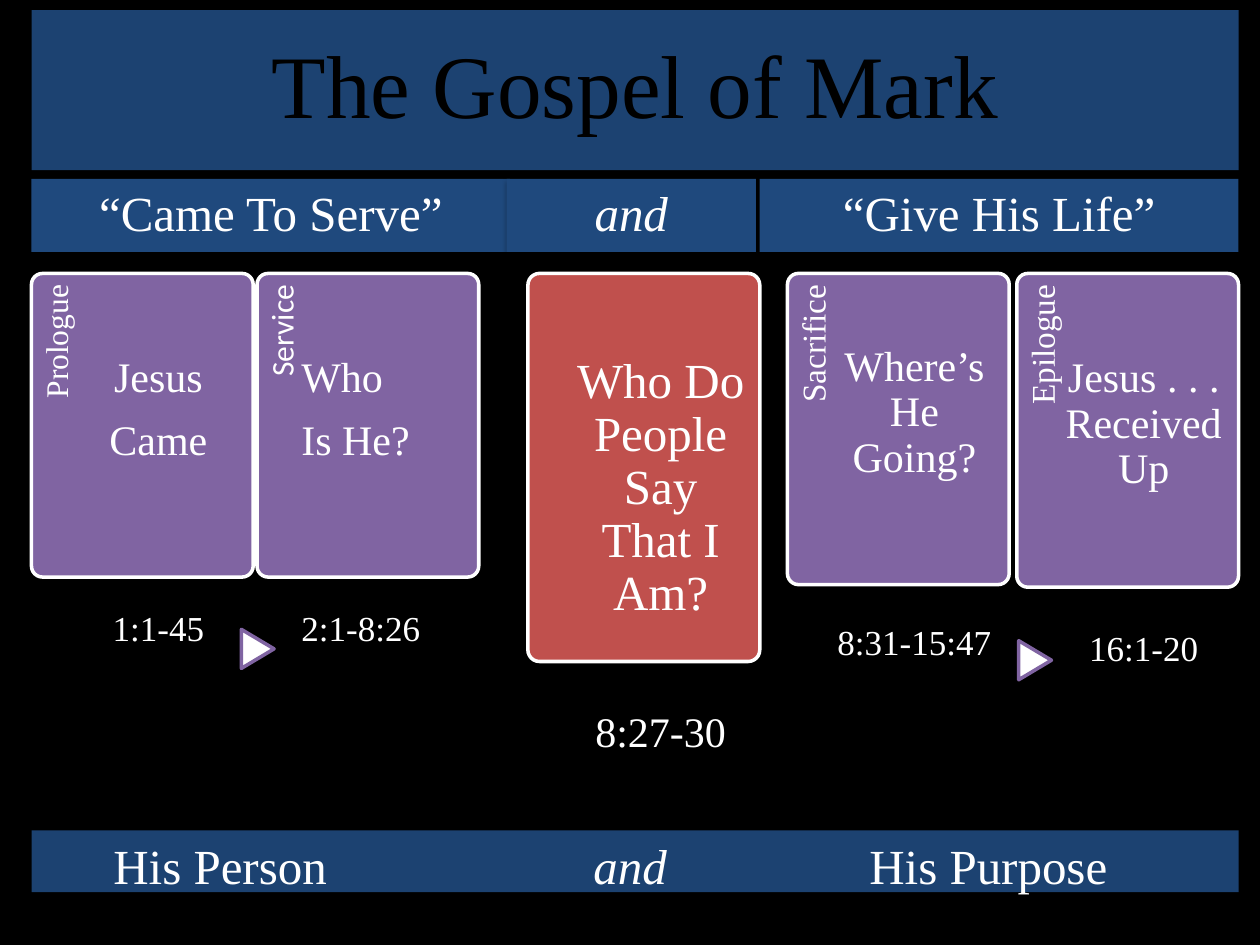
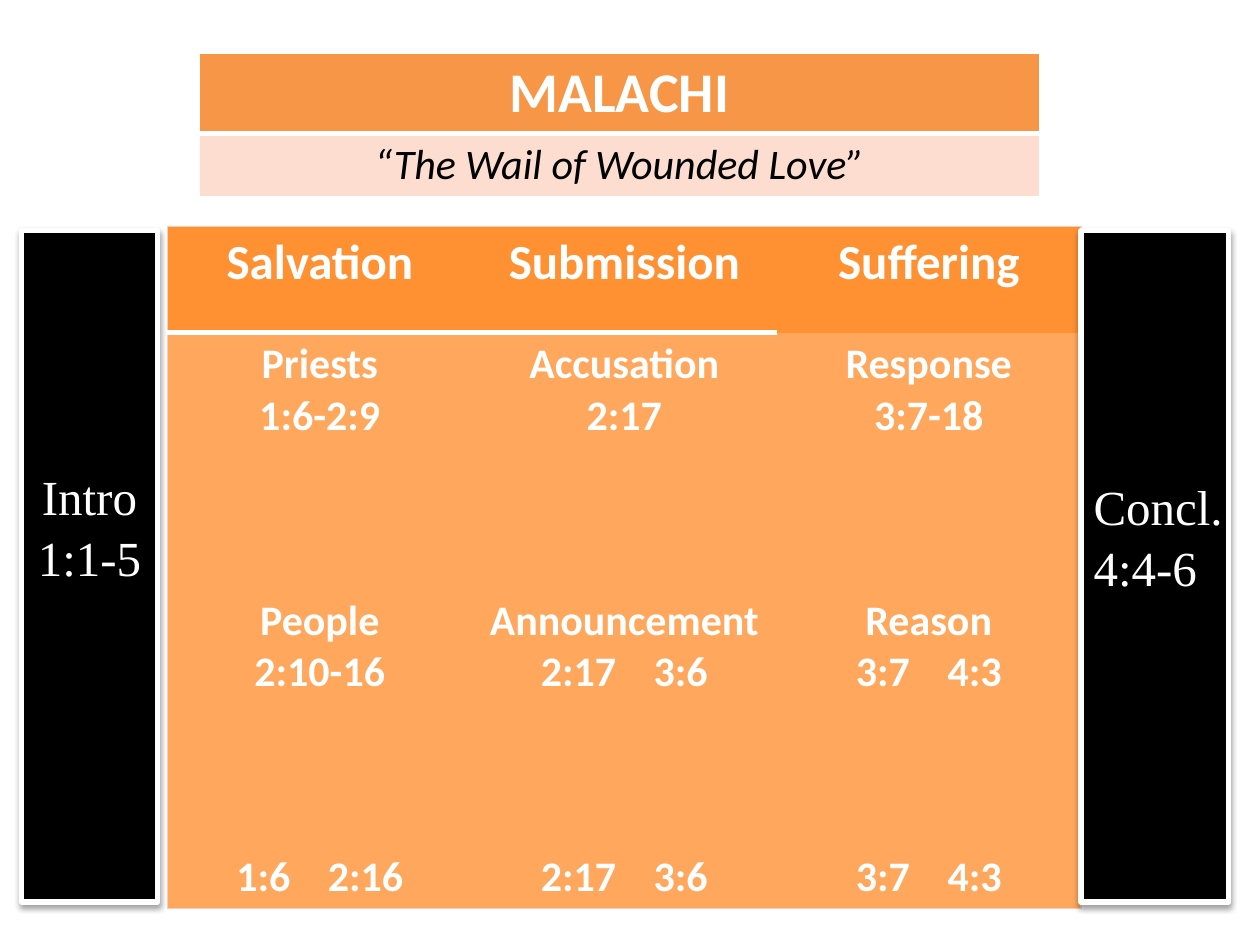
from lxml import etree
from pptx import Presentation
from pptx.dml.color import RGBColor
from pptx.enum.shapes import MSO_SHAPE
from pptx.enum.text import MSO_ANCHOR, PP_ALIGN
from pptx.oxml.ns import qn
from pptx.util import Inches, Pt

RECTANGLE = MSO_SHAPE.RECTANGLE
ROUNDED = MSO_SHAPE.ROUNDED_RECTANGLE
TRIANGLE = MSO_SHAPE.FLOWCHART_EXTRACT
LEFT, CENTER, RIGHT = PP_ALIGN.LEFT, PP_ALIGN.CENTER, PP_ALIGN.RIGHT
MIDDLE = MSO_ANCHOR.MIDDLE

BLACK = RGBColor(0x00, 0x00, 0x00)
WHITE = RGBColor(0xFF, 0xFF, 0xFF)
DEEP_BLUE = RGBColor(0x1C, 0x42, 0x71)
BLUE = RGBColor(0x1F, 0x49, 0x7D)
PURPLE = RGBColor(0x80, 0x64, 0xA2)
RED = RGBColor(0xC0, 0x50, 0x4D)
ORANGE = RGBColor(0xF7, 0x96, 0x46)
BRIGHT_ORANGE = RGBColor(0xFF, 0x91, 0x33)
LIGHT_ORANGE = RGBColor(0xFF, 0xA7, 0x5C)
PEACH = RGBColor(0xFC, 0xDD, 0xCF)
EDGE = RGBColor(0xF7, 0xCE, 0xBB)

SERIF, SANS = "Times New Roman", "Calibri"


def add_box(slide, at, fill=None, line=None, width=2, kind=RECTANGLE, shadow=False):
    """Add a shape, or a plain text box when there is no fill."""
    place = [Inches(value) for value in at]
    if fill is None:
        shape = slide.shapes.add_textbox(*place)
    else:
        shape = slide.shapes.add_shape(kind, *place)
        shape.shadow.inherit = False
        shape.fill.solid()
        shape.fill.fore_color.rgb = fill
        if line is None:
            shape.line.fill.background()
        else:
            shape.line.color.rgb = line
            shape.line.width = Pt(width)
    if shadow:
        effects = shape._element.spPr.find(qn("a:effectLst"))
        outer = etree.SubElement(effects, qn("a:outerShdw"), blurRad=str(Pt(3.1)),
                                 dist=str(Pt(1.7)), dir="5400000", rotWithShape="0")
        black = etree.SubElement(outer, qn("a:srgbClr"), val=str(BLACK))
        etree.SubElement(black, qn("a:alpha"), val="36000")
    frame = shape.text_frame
    frame.word_wrap = True
    frame.margin_left = frame.margin_right = frame.margin_top = frame.margin_bottom = 0
    return shape


def add_text(frame, lines, align=CENTER, font=SERIF, color=WHITE, spacing=None,
             bold=False, italic=False, gap=None):
    """Write (text, size, space before) lines; gap widens the spaces, in points."""
    for index, (text, size, before) in enumerate(lines):
        paragraph = frame.paragraphs[0] if index == 0 else frame.add_paragraph()
        paragraph.alignment = align
        paragraph.space_before = Pt(before)
        if spacing:
            paragraph.line_spacing = spacing
        for piece in text.partition(" ") if gap else [text]:
            if not piece:
                continue
            run = paragraph.add_run()
            run.text = piece
            run.font.name, run.font.size = font, Pt(size)
            run.font.bold, run.font.italic = bold, italic
            run.font.color.rgb = color
            if gap and piece == " ":
                run._r.get_or_add_rPr().set("spc", str(gap * 100))


presentation = Presentation()
presentation.slide_width, presentation.slide_height = Inches(10), Inches(7.5)
slides = []
for background in (BLACK, WHITE):
    slide = presentation.slides.add_slide(presentation.slide_layouts[6])
    slide.background.fill.solid()
    slide.background.fill.fore_color.rgb = background
    slides.append(slide)
mark, malachi = slides

# Mark: title, theme banners and bottom band
BAND_LEFT, BAND_WIDTH = 0.25, 9.58
banners = [
    ("The Gospel of Mark", (BAND_LEFT, 0.08, BAND_WIDTH, 1.27), DEEP_BLUE, 51, BLACK),
    ("“Came To Serve”", (BAND_LEFT, 1.42, 3.8, 0.58), BLUE, 28, WHITE),
    ("and", (4.02, 1.42, 1.98, 0.58), BLUE, 28, WHITE),
    ("“Give His Life”", (6.03, 1.42, 3.8, 0.58), BLUE, 28, WHITE),
]
for text, at, fill, size, color in banners:
    banner = add_box(mark, at, fill, shadow=fill == BLUE)
    banner.text_frame.vertical_anchor = MIDDLE
    add_text(banner.text_frame, [(text, size, 0)], color=color, spacing=0.9,
             italic=text == "and")

add_box(mark, (BAND_LEFT, 6.59, BAND_WIDTH, 0.49), DEEP_BLUE)
for text, left in (("His Person", 0.9), ("and", 4.71), ("His Purpose", 6.9)):
    phrase = add_box(mark, (left, 6.63, 2.5, 0.47))
    add_text(phrase.text_frame, [(text, 28, 0)], LEFT, italic=text == "and")

# Mark: cards, each with a side label, a question and its verses below
CARD_TOP = 2.17
cards = [
    # left, width, height, fill, label, label size, label font, text inset, align, lines
    (0.25, 1.76, 2.41, PURPLE, "Prologue", 18, SERIF, 0.66, CENTER,
     [("Jesus", 24, 0), ("Came", 24, 9.6), ("1:1-45", 20, 84)]),
    (2.04, 1.76, 2.41, PURPLE, "Service", 18, SANS, 0.66, LEFT,
     [("Who", 24, 0), ("Is He?", 24, 9.6), ("2:1-8:26", 20, 84)]),
    (4.19, 1.84, 3.08, RED, None, 0, SERIF, 0.66, CENTER,
     [("Who Do People Say That I Am?", 28, 0), ("8:27-30", 24, 51.5)]),
    (6.25, 1.76, 2.47, PURPLE, "Sacrifice", 19, SERIF, 0.57, CENTER,
     [("Where’s He Going?", 24, 0), ("8:31-15:47", 20, 82)]),
    (8.07, 1.76, 2.49, PURPLE, "Epilogue", 19, SERIF, 0.66, CENTER,
     [("Jesus . . . Received Up", 24, 0), ("16:1-20", 20, 79)]),
]
for left, width, height, fill, label, size, font, inset, align, lines in cards:
    card = add_box(mark, (left, CARD_TOP, width, height), fill, WHITE, kind=ROUNDED)
    card.adjustments[0] = 0.05
    if label:
        length = 0.82 * height
        side = add_box(mark, (left + 0.18 - length / 2,
                              CARD_TOP + length / 2 - 0.175, length, 0.35))
        side.rotation = 270
        side.text_frame.margin_top = Inches(0.07)
        side.text_frame.margin_right = Inches(0.09)
        add_text(side.text_frame, [(label, size, 0)], RIGHT, font, spacing=0.9)
    question = add_box(mark, (left + 0.2 * width, CARD_TOP, 0.745 * width, height))
    question.text_frame.margin_top = Inches(inset)
    add_text(question.text_frame, lines, align, spacing=0.9)

for left, top in ((1.89, 5.02), (8.06, 5.11)):
    arrow = add_box(mark, (left, top, 0.31, 0.26), WHITE, PURPLE, kind=TRIANGLE)
    arrow.rotation = 90

# Malachi: outline table and title table
tables = []
for at, columns, heights in (
    ((1.33, 1.8, 7.25, 5.41), 3, (0.84, 4.57)),
    ((1.58, 0.42, 6.67, 1.14), 1, (0.64, 0.5)),
):
    table = malachi.shapes.add_table(
        len(heights), columns, *[Inches(value) for value in at]).table
    table.first_row = table.horz_banding = False
    for row, height in zip(table.rows, heights):
        row.height = Inches(height)
    tables.append(table)
outline, title = tables

thin, thick, plain = (EDGE, 0.75), (WHITE, 3), (WHITE, 1)
title_sides = {"L": plain, "R": plain}
cells = [
    (title.cell(0, 0), [("MALACHI", 32, 0)], ORANGE,
     {**title_sides, "T": plain, "B": thick}, {"bold": True}),
    (title.cell(1, 0), [("“The Wail of Wounded Love”", 24, 0)], PEACH,
     {**title_sides, "T": thick, "B": plain}, {"italic": True, "color": BLACK}),
]
sections = [
    ("Salvation", "Priests", "1:6-2:9", "People", "2:10-16", "1:6 2:16"),
    ("Submission", "Accusation", "2:17", "Announcement", "2:17 3:6", "2:17 3:6"),
    ("Suffering", "Response", "3:7-18", "Reason", "3:7 4:3", "3:7 4:3"),
]
SECTION_GAPS = (0, 0, 88, 0, 88)
for column, (heading, *entries) in enumerate(sections):
    sides = {0: {"L": thin}, 2: {"R": thin}}.get(column, {})
    rule = {} if column == 2 else {"B": thick}
    lines = [(text, 24, before) for text, before in zip(entries, SECTION_GAPS)]
    cells.append((outline.cell(0, column), [(heading, 28, 0)], BRIGHT_ORANGE,
                  {**sides, "T": thin, **rule}, {"bold": True}))
    cells.append((outline.cell(1, column), lines, LIGHT_ORANGE,
                  {**sides, "T": rule.get("B"), "B": thin}, {"bold": True, "gap": 16}))

for cell, lines, fill, borders, style in cells:
    properties = cell._tc.get_or_add_tcPr()
    for side in "LRTB":
        border = etree.SubElement(properties, qn("a:ln" + side))
        if borders.get(side):
            color, width = borders[side]
            border.set("w", str(Pt(width)))
            solid = etree.SubElement(border, qn("a:solidFill"))
            etree.SubElement(solid, qn("a:srgbClr"), val=str(color))
        else:
            etree.SubElement(border, qn("a:noFill"))
    cell.fill.solid()
    cell.fill.fore_color.rgb = fill
    add_text(cell.text_frame, lines, font=SANS, **style)

# Malachi: opening and closing bars
for left, width, text_top, align, name, verses in (
    (0.17, 1.08, 3.7, CENTER, "Intro", "1:1-5"),
    (8.58, 1.17, 3.78, LEFT, "Concl.", "4:4-6"),
):
    add_box(malachi, (left, 1.83, width, 5.33), BLACK, WHITE, 3, shadow=True)
    caption = add_box(malachi, (left, text_top, width, 0.95))
    if align == LEFT:
        caption.left, caption.width = Inches(left + 0.1), Inches(width)
    add_text(caption.text_frame, [(name, 28, 0), (verses, 28, 1.5)], align)

presentation.save("out.pptx")
